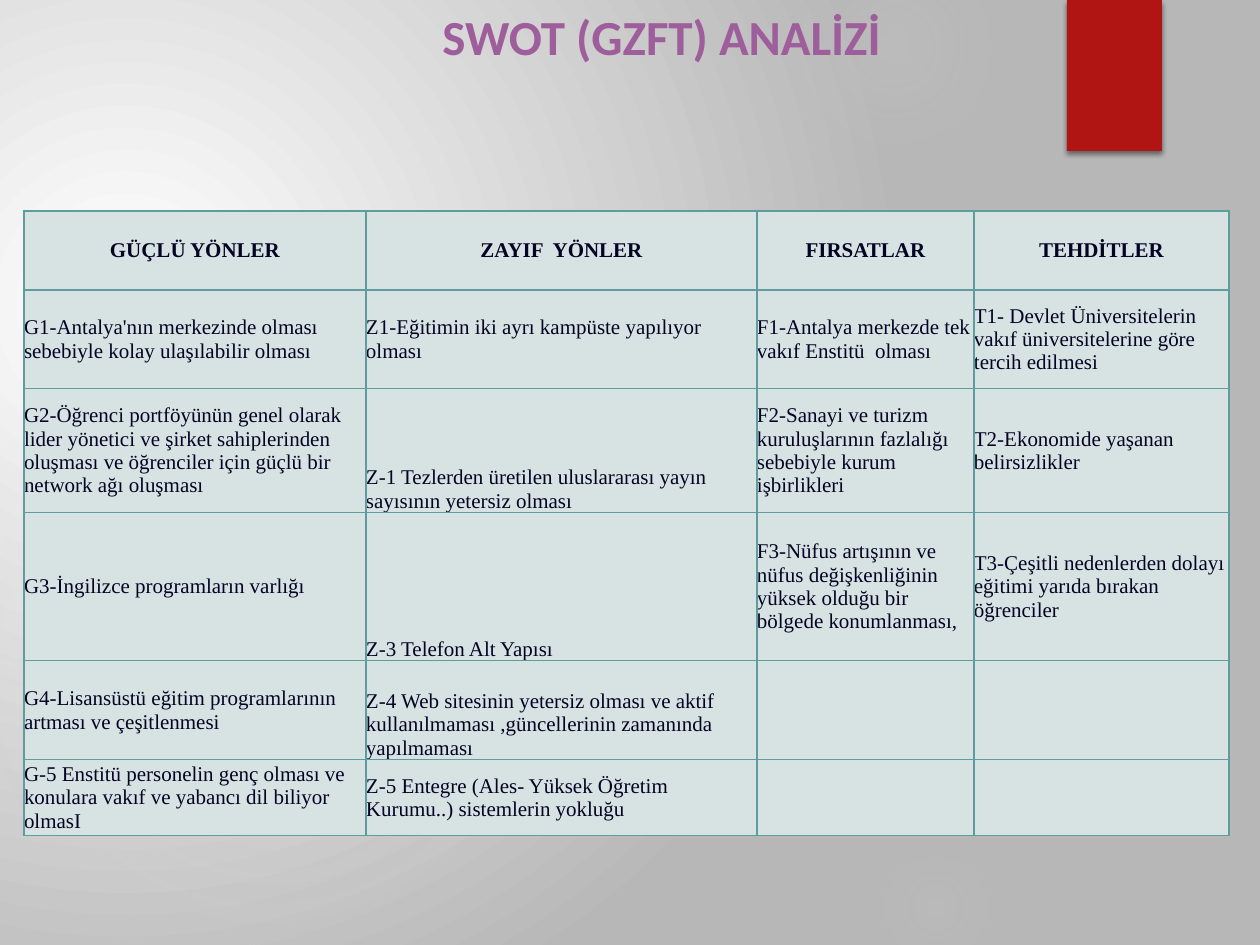
from itertools import product

from lxml import etree
from pptx import Presentation
from pptx.dml.color import RGBColor
from pptx.enum.shapes import MSO_SHAPE
from pptx.enum.text import MSO_ANCHOR, MSO_AUTO_SIZE, PP_ALIGN
from pptx.oxml.ns import qn
from pptx.util import Pt

TOP, MIDDLE, BOTTOM = MSO_ANCHOR.TOP, MSO_ANCHOR.MIDDLE, MSO_ANCHOR.BOTTOM
LEFT, CENTER = PP_ALIGN.LEFT, PP_ALIGN.CENTER
OVAL, RECT = MSO_SHAPE.OVAL, MSO_SHAPE.RECTANGLE

# Content
TITLE = "SWOT (GZFT) ANALİZİ"
ROWS = [
    ("GÜÇLÜ YÖNLER", "ZAYIF  YÖNLER", "FIRSATLAR", "TEHDİTLER"),
    ("G1-Antalya'nın merkezinde olması sebebiyle kolay ulaşılabilir olması",
     "Z1-Eğitimin iki ayrı kampüste yapılıyor olması",
     "F1-Antalya merkezde tek vakıf Enstitü  olması",
     "T1- Devlet Üniversitelerin vakıf üniversitelerine göre tercih edilmesi"),
    ("G2-Öğrenci portföyünün genel olarak lider yönetici ve şirket sahiplerinden "
     "oluşması ve öğrenciler için güçlü bir network ağı oluşması",
     "Z-1 Tezlerden üretilen uluslararası yayın sayısının yetersiz olması",
     "F2-Sanayi ve turizm kuruluşlarının fazlalığı sebebiyle kurum işbirlikleri",
     "T2-Ekonomide yaşanan belirsizlikler"),
    ("G3-İngilizce programların varlığı",
     "Z-3 Telefon Alt Yapısı",
     "F3-Nüfus artışının ve nüfus değişkenliğinin yüksek olduğu bir bölgede konumlanması,",
     "T3-Çeşitli nedenlerden dolayı eğitimi yarıda bırakan öğrenciler"),
    ("G4-Lisansüstü eğitim programlarının artması ve çeşitlenmesi",
     "Z-4 Web sitesinin yetersiz olması ve aktif kullanılmaması ,güncellerinin "
     "zamanında yapılmaması", "", ""),
    ("G-5 Enstitü personelin genç olması ve konulara vakıf ve yabancı dil biliyor olmasI",
     "Z-5 Entegre (Ales- Yüksek Öğretim Kurumu..) sistemlerin yokluğu", "", ""),
]
BOTTOM_CELLS = {(2, 1), (3, 1), (4, 1)}

# Layout in px
SLIDE_W, SLIDE_H = 1260, 945
TITLE_BOX = (358, 0, 607, 72)
TAB_BOX = (1067, 0, 95, 151)
TABLE_LEFT, TABLE_TOP = 24, 211
COL_W = [342, 391, 217, 255]
ROW_H = [79, 99, 124, 148, 99, 76]
# Glows: left, top, diameter, then (position %, opacity %) stops
GLOWS = [
    (868, 231, 388, [(0, 7), (36, 6), (69, 0)]),
    (784, -63, 220, [(0, 14), (36, 7), (73, 0)]),
    (868, 840, 136, [(0, 9), (36, 5), (66, 0)]),
    (-21, 368, 577, [(0, 11), (36, 10), (75, 0)]),
    (-116, 399, 325, [(0, 8), (36, 8), (72, 0)]),
]

THEME = {
    "title": "9E5E9B", "text": "020424", "cell": "D7E2E2", "border": "5F9C9D",
    "tab": "B01513", "glow": "D9D9D9", "shadow": "000000",
    "bg": [(0, "FFFFFF", 100), (100, "B7B7B7", 100)],
    "title_font": "Calibri", "table_font": "Times New Roman",
    "title_size": 28, "table_size": 12, "border_width": 0.75,
}


def px(n):
    return round(n * 914400 / 126)


def sub(parent, tag, **attrs):
    return etree.SubElement(parent, qn(tag), {k: str(v) for k, v in attrs.items()})


def add_color(parent, color, opacity=100):
    clr = sub(parent, "a:srgbClr", val=color)
    if opacity < 100:
        sub(clr, "a:alpha", val=opacity * 1000)


def radial_fill(fill, element, stops, center):
    """Circular gradient from (position, colour, opacity) stops."""
    fill.gradient()
    grad = element.find(".//" + qn("a:gradFill"))
    for child in list(grad):
        grad.remove(child)
    gs_list = sub(grad, "a:gsLst")
    for pos, color, opacity in stops:
        add_color(sub(gs_list, "a:gs", pos=pos * 1000), color, opacity)
    path = sub(grad, "a:path", path="circle")
    sub(path, "a:fillToRect", **{k: v * 1000 for k, v in zip("ltrb", center)})


def add_plain_shape(s, kind, box):
    sp = s.shapes.add_shape(kind, *map(px, box))
    sp.shadow.inherit = False
    sp.line.fill.background()
    return sp


def write(tf, text, font, size, color, bold=False, align=LEFT):
    tf.word_wrap = True
    p = tf.paragraphs[0]
    p.alignment = align
    r = p.add_run()
    r.text = text
    r.font.name, r.font.size, r.font.bold = font, Pt(size), bold
    r.font.color.rgb = RGBColor.from_string(color)


def style_cell(cell, anchor):
    cell.margin_left = cell.margin_right = cell.margin_top = cell.margin_bottom = 0
    cell.vertical_anchor = anchor
    tc_pr = cell._tc.get_or_add_tcPr()
    for side in "LRTB":
        ln = sub(tc_pr, f"a:ln{side}", w=Pt(THEME["border_width"]))
        add_color(sub(ln, "a:solidFill"), THEME["border"])
    cell.fill.solid()
    cell.fill.fore_color.rgb = RGBColor.from_string(THEME["cell"])


def main():
    prs = Presentation()
    prs.slide_width, prs.slide_height = px(SLIDE_W), px(SLIDE_H)
    s = prs.slides.add_slide(prs.slide_layouts[5])

    # Background and soft glows
    radial_fill(s.background.fill, s._element, THEME["bg"], (45, 65, 125, 100))
    for x, y, d, stops in GLOWS:
        sp = add_plain_shape(s, OVAL, (x, y, d, d))
        glow = [(pos, THEME["glow"], opacity) for pos, opacity in stops]
        radial_fill(sp.fill, sp._element, glow, (50, 50, 50, 50))

    # Red tab with shadow
    tab = add_plain_shape(s, RECT, TAB_BOX)
    tab.fill.solid()
    tab.fill.fore_color.rgb = RGBColor.from_string(THEME["tab"])
    effects = tab._element.spPr.find(qn("a:effectLst"))
    shadow = sub(effects, "a:outerShdw", blurRad=Pt(3), dist=Pt(2), dir=90 * 60000,
                 rotWithShape=0)
    add_color(shadow, THEME["shadow"], 45)

    # Title, in front of the decoration
    title = s.shapes.title
    title.left, title.top, title.width, title.height = map(px, TITLE_BOX)
    tf = title.text_frame
    write(tf, TITLE, THEME["title_font"], THEME["title_size"], THEME["title"],
          bold=True, align=CENTER)
    tf.auto_size = MSO_AUTO_SIZE.SHAPE_TO_FIT_TEXT
    tf.vertical_anchor = TOP
    s.shapes._spTree.append(title._element)

    # SWOT table
    table = s.shapes.add_table(len(ROW_H), len(COL_W), px(TABLE_LEFT), px(TABLE_TOP),
                               px(sum(COL_W)), px(sum(ROW_H))).table
    table.horz_banding = False
    for col, w in zip(table.columns, COL_W):
        col.width = px(w)
    for row, h in zip(table.rows, ROW_H):
        row.height = px(h)
    for i, j in product(range(len(ROW_H)), range(len(COL_W))):
        cell = table.cell(i, j)
        style_cell(cell, BOTTOM if (i, j) in BOTTOM_CELLS else MIDDLE)
        if ROWS[i][j]:
            write(cell.text_frame, ROWS[i][j], THEME["table_font"], THEME["table_size"],
                  THEME["text"], bold=i == 0, align=CENTER if i == 0 else LEFT)

    prs.save("out.pptx")


if __name__ == "__main__":
    main()
